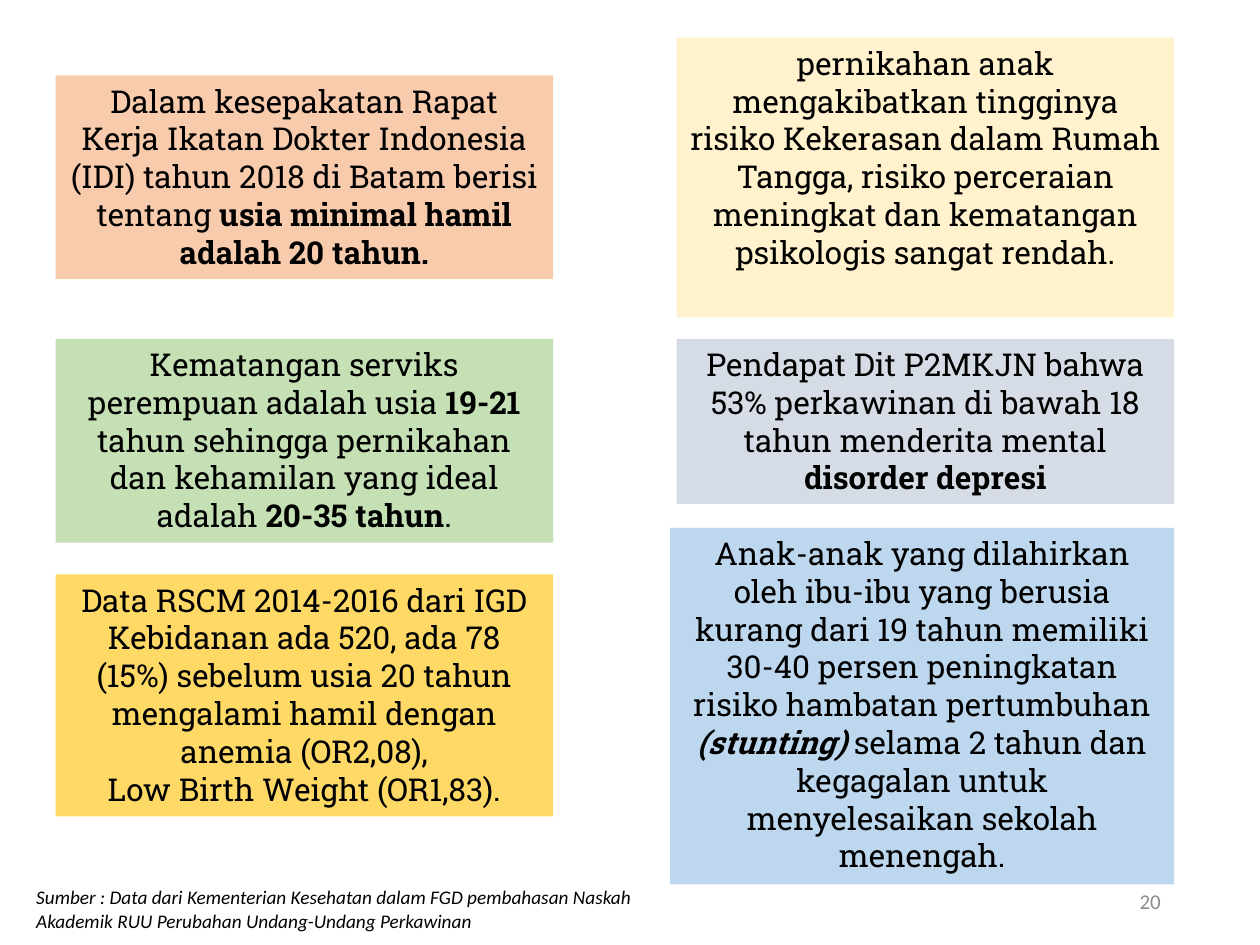
from pptx import Presentation
from pptx.dml.color import RGBColor
from pptx.enum.shapes import MSO_SHAPE
from pptx.enum.text import MSO_ANCHOR, PP_ALIGN
from pptx.util import Cm, Pt

COLORS = {
    "peach": "F8CBAD", "green": "C5E0B4", "gold": "FFD966",
    "cream": "FFF2CC", "grey": "D6DCE5", "blue": "BDD7EE",
    "text": "000000", "number": "8C8C8C",
}
CARD_FONT = {"name": "Roboto Slab", "size": Pt(18)}
SOURCE_FONT = {"name": "Calibri", "size": Pt(11), "italic": True}
NUMBER_FONT = {"name": "Calibri", "size": Pt(12)}
BOLD = {"bold": True}
BOLD_ITALIC = {"bold": True, "italic": True}

# Each card: top within its column, width, height, fill, paragraphs of (text, format)
LEFT_CARDS = [
    (0, 10.03, 4.11, "peach", [[
        ("Dalam kesepakatan Rapat Kerja Ikatan Dokter Indonesia (IDI) "
         "tahun 2018 di Batam berisi tentang ", {}),
        ("usia minimal hamil adalah 20 tahun.", BOLD)]]),
    (5.31, 10.03, 4.11, "green", [[
        ("Kematangan serviks perempuan adalah usia ", {}),
        ("19-21 ", BOLD),
        ("tahun sehingga pernikahan dan kehamilan yang ideal adalah ", {}),
        ("20-35 tahun", BOLD),
        (".", {})]]),
    (10.06, 10.03, 4.88, "gold", [
        [("Data RSCM 2014-2016 dari IGD Kebidanan ada 520, ada 78 (15%) "
          "sebelum usia 20 tahun mengalami hamil dengan anemia (OR2,08),", {})],
        [("Low Birth Weight (OR1,83).", {})]]),
]
RIGHT_CARDS = [
    (0, 10.03, 5.64, "cream", [[
        ("pernikahan anak mengakibatkan tingginya risiko Kekerasan dalam "
         "Rumah Tangga, risiko perceraian meningkat dan kematangan "
         "psikologis sangat rendah.", {})]]),
    (6.07, 10.03, 3.33, "grey", [[
        ("Pendapat Dit P2MKJN bahwa 53% perkawinan di bawah 18 tahun "
         "menderita mental ", {}),
        ("disorder depresi", BOLD)]]),
    (9.88, 10.16, 7.19, "blue", [[
        ("Anak-anak yang dilahirkan oleh ibu-ibu yang berusia kurang dari "
         "19 tahun memiliki 30-40 persen peningkatan risiko hambatan "
         "pertumbuhan ", {}),
        ("(stunting) ", BOLD_ITALIC),
        ("selama 2 tahun dan kegagalan untuk menyelesaikan sekolah "
         "menengah.", {})]]),
]


def rgb(name):
    return RGBColor.from_string(COLORS[name])


def write(sp, paragraphs, font, color, align, anchor=MSO_ANCHOR.TOP):
    tf = sp.text_frame
    tf.word_wrap = True
    tf.vertical_anchor = anchor
    for i, runs in enumerate(paragraphs):
        p = tf.paragraphs[0] if i == 0 else tf.add_paragraph()
        p.alignment = align
        for text, extra in runs:
            r = p.add_run()
            r.text = text
            for key, value in {**font, **extra}.items():
                setattr(r.font, key, value)
            r.font.color.rgb = rgb(color)


def add_column(s, box, cards):
    """Stack cards in a column, flush with its right edge."""
    left, top, width = box
    for offset, card_width, height, fill, paragraphs in cards:
        sp = s.shapes.add_shape(
            MSO_SHAPE.RECTANGLE, Cm(left + width - card_width),
            Cm(top + offset), Cm(card_width), Cm(height))
        sp.shadow.inherit = False
        sp.fill.solid()
        sp.fill.fore_color.rgb = rgb(fill)
        sp.line.fill.background()
        write(sp, paragraphs, CARD_FONT, "text", PP_ALIGN.CENTER)


def add_footer(s, box):
    """Source on the left, slide number on the right."""
    left, top, width = box
    source = s.shapes.add_textbox(Cm(left), Cm(top + 0.08), Cm(12.7), Cm(1.19))
    write(source, [[(
        "Sumber : Data dari Kementerian Kesehatan dalam FGD pembahasan Naskah "
        "Akademik RUU Perubahan Undang-Undang Perkawinan", {})]],
        SOURCE_FONT, "text", PP_ALIGN.LEFT)
    number = s.shapes.add_textbox(
        Cm(left + width - 5.72), Cm(top), Cm(5.72), Cm(1.02))
    write(number, [[("20", {})]], NUMBER_FONT, "number", PP_ALIGN.RIGHT,
          MSO_ANCHOR.MIDDLE)


def main():
    prs = Presentation()
    prs.slide_width, prs.slide_height = Cm(25.4), Cm(19.05)
    s = prs.slides.add_slide(prs.slide_layouts[6])

    # Two columns of cards
    add_column(s, (1.12, 1.52, 10.03), LEFT_CARDS)
    add_column(s, (13.64, 0.76, 10.03), RIGHT_CARDS)

    # Footer
    add_footer(s, (0.48, 17.65, 23.17))
    prs.save("out.pptx")


if __name__ == "__main__":
    main()
